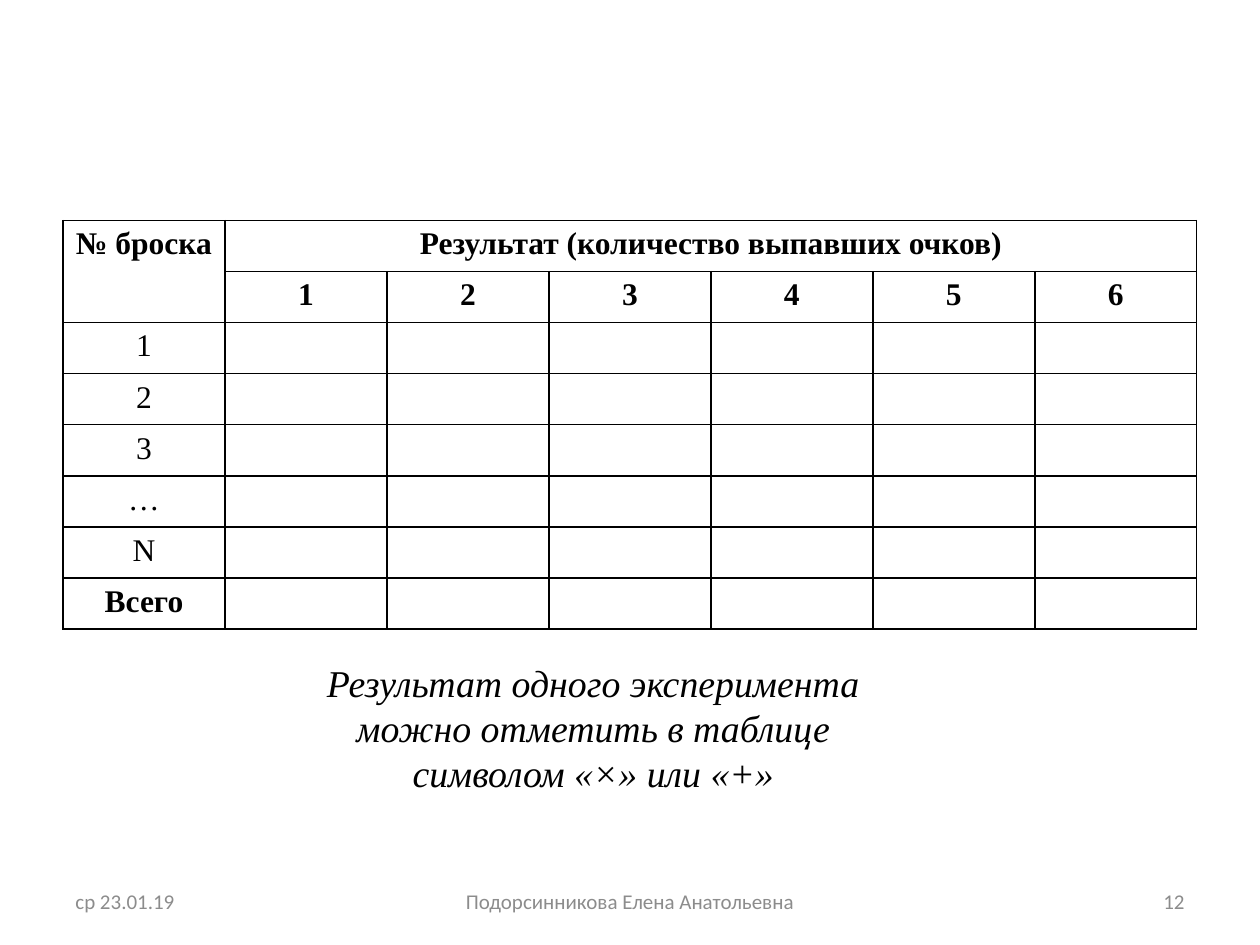
from lxml.etree import SubElement
from pptx import Presentation
from pptx.dml.color import RGBColor
from pptx.enum.text import MSO_ANCHOR, MSO_AUTO_SIZE, PP_ALIGN
from pptx.oxml.ns import qn
from pptx.util import Pt

SERIF, SANS = "Times New Roman", "Calibri"
BLACK, GREY = "000000", "8C8C8C"
OUTCOMES = ["1", "2", "3", "4", "5", "6"]
THROWS = ["1", "2", "3", "…", "N", "Всего"]
BOLD_LABELS = {"Всего"}
TABLE_LEFT, TABLE_TOP, TABLE_WIDTH, ROW_HEIGHT = 36, 126, 648, 29.16
FOOTER_TOP, FOOTER_HEIGHT = 500.4, 28.8


def color(hex_value):
    return RGBColor.from_string(hex_value)


def write(frame, text, size, family, hex_value, align, bold=False, italic=False):
    frame.text = text
    paragraph = frame.paragraphs[0]
    paragraph.alignment = align
    for run in paragraph.runs:
        font = run.font
        font.size, font.name = Pt(size), family
        font.bold, font.italic = bold, italic
        font.color.rgb = color(hex_value)


def add_title(slide, text):
    title = slide.shapes.title
    title.left, title.top = Pt(174), Pt(376.5)
    title.width, title.height = Pt(330), Pt(78.5)
    frame = title.text_frame
    frame.word_wrap = True
    frame.auto_size = MSO_AUTO_SIZE.NONE
    frame.vertical_anchor = MSO_ANCHOR.MIDDLE
    write(frame, text, 21.6, SERIF, BLACK, PP_ALIGN.CENTER, italic=True)


def outline_cell(cell):
    properties = cell._tc.get_or_add_tcPr()
    for side in ("a:lnL", "a:lnR", "a:lnT", "a:lnB"):
        border = SubElement(properties, qn(side), w=str(Pt(1)))
        fill = SubElement(border, qn("a:solidFill"))
        SubElement(fill, qn("a:srgbClr"), val=BLACK)
    cell.fill.background()


def label_cell(cell, text, bold):
    write(cell.text_frame, text, 18, SERIF, BLACK, PP_ALIGN.CENTER, bold)


def add_throw_table(slide):
    row_count, column_count = len(THROWS) + 2, len(OUTCOMES) + 1
    table = slide.shapes.add_table(
        row_count, column_count, Pt(TABLE_LEFT), Pt(TABLE_TOP),
        Pt(TABLE_WIDTH), Pt(ROW_HEIGHT * row_count)).table
    table.first_row = table.horz_banding = False
    for column in table.columns:
        column.width = Pt(TABLE_WIDTH / column_count)
    for row in table.rows:
        row.height = Pt(ROW_HEIGHT)
    for cell in table.iter_cells():
        outline_cell(cell)

    # Two-level heading
    table.cell(0, 0).merge(table.cell(1, 0))
    table.cell(0, 1).merge(table.cell(0, column_count - 1))
    label_cell(table.cell(0, 0), "№ броска", True)
    label_cell(table.cell(0, 1), "Результат (количество выпавших очков)", True)
    for column, outcome in enumerate(OUTCOMES, start=1):
        label_cell(table.cell(1, column), outcome, True)

    # Throw numbers and the total
    for row, throw in enumerate(THROWS, start=2):
        label_cell(table.cell(row, 0), throw, throw in BOLD_LABELS)


def add_footer(slide, text, left, width, align):
    frame = slide.shapes.add_textbox(
        Pt(left), Pt(FOOTER_TOP), Pt(width), Pt(FOOTER_HEIGHT)).text_frame
    frame.word_wrap = True
    frame.vertical_anchor = MSO_ANCHOR.MIDDLE
    write(frame, text, 12, SANS, GREY, align)


def main():
    deck = Presentation()
    deck.slide_width, deck.slide_height = Pt(720), Pt(540)
    slide = deck.slides.add_slide(deck.slide_layouts.get_by_name("Title Only"))
    slide.background.fill.solid()
    slide.background.fill.fore_color.rgb = color("FFFFFF")

    add_title(slide, "Результат одного эксперимента можно отметить "
                     "в таблице символом «×» или «+»")
    add_throw_table(slide)

    # Date, author and slide number
    add_footer(slide, "ср 23.01.19", 36, 168, PP_ALIGN.LEFT)
    add_footer(slide, "Подорсинникова Елена Анатольевна", 246, 228, PP_ALIGN.CENTER)
    add_footer(slide, "12", 516, 168, PP_ALIGN.RIGHT)

    deck.save("out.pptx")


if __name__ == "__main__":
    main()
